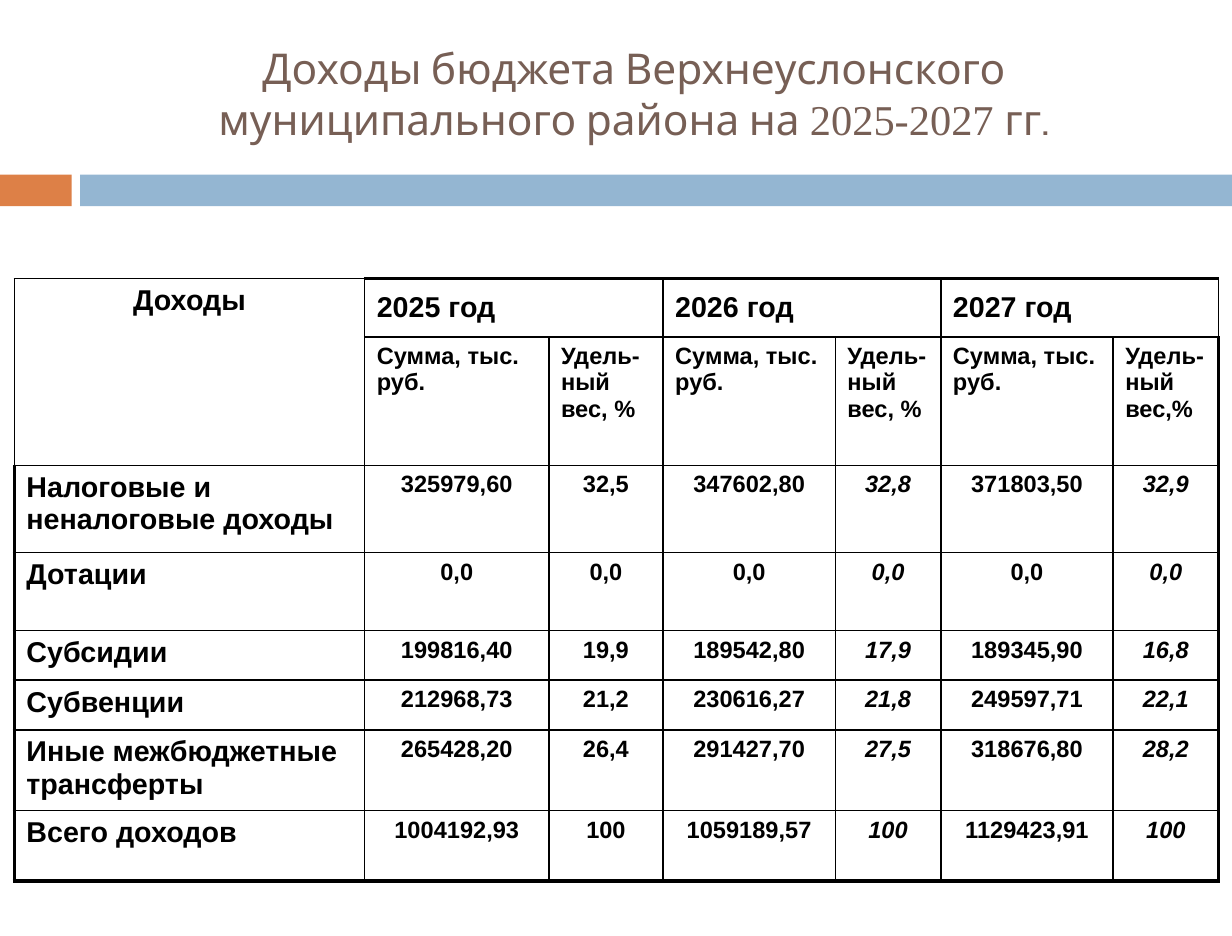
from lxml.etree import SubElement
from pptx import Presentation
from pptx.dml.color import RGBColor
from pptx.enum.shapes import MSO_SHAPE as Shape
from pptx.enum.text import MSO_ANCHOR as Anchor, PP_ALIGN as Align
from pptx.oxml.ns import qn
from pptx.util import Cm, Pt


def paint(fill, color):
    fill.solid()
    fill.fore_color.rgb = RGBColor.from_string(color)


def write(para, text, color, **form):
    """Add a run and set its font from the format values."""
    run = para.add_run()
    run.text = text
    paint(run.font.fill, color)
    for key, val in form.items():
        setattr(run.font, key, val)


deck = Presentation()
deck.slide_width, deck.slide_height = Cm(25.81), Cm(19.61)
slide = deck.slides.add_slide(deck.slide_layouts[6])

# Bands under the title
for left, width, color in [(0, 1.5, "DD8047"), (1.68, 24.13, "94B6D2")]:
    band = slide.shapes.add_shape(Shape.RECTANGLE, Cm(left), Cm(3.66), Cm(width), Cm(0.66))
    band.shadow.inherit = False
    paint(band.fill, color)
    band.line.fill.background()

# Title
frame = slide.shapes.add_textbox(Cm(2.11), Cm(0.66), Cm(22.35), Cm(2.59)).text_frame
frame.word_wrap = True
frame.vertical_anchor = Anchor.MIDDLE
title = frame.paragraphs[0]
title.alignment = Align.CENTER
for text, font in [
    ("Доходы бюджета Верхнеуслонского муниципального района на ", "Cabin"),
    ("2025-2027 ", "Times New Roman"),
    ("гг.", "Cabin"),
]:
    write(title, text, "775F55", name=font, size=Pt(25.2))

# Income table
SUM, SHARE = "Сумма, тыс. руб.", "Удель-ный вес, %"
rows = [
    ["Доходы", "2025 год", "", "2026 год", "", "2027 год", ""],
    ["", SUM, SHARE, SUM, SHARE, SUM, "Удель-ный вес,%"],
    ["Налоговые и неналоговые доходы", "325979,60", "32,5", "347602,80", "32,8", "371803,50", "32,9"],
    ["Дотации", "0,0", "0,0", "0,0", "0,0", "0,0", "0,0"],
    ["Субсидии", "199816,40", "19,9", "189542,80", "17,9", "189345,90", "16,8"],
    ["Субвенции", "212968,73", "21,2", "230616,27", "21,8", "249597,71", "22,1"],
    ["Иные межбюджетные трансферты", "265428,20", "26,4", "291427,70", "27,5", "318676,80", "28,2"],
    ["Всего доходов", "1004192,93", "100", "1059189,57", "100", "1129423,91", "100"],
]
widths = [7.34, 3.86, 2.39, 3.61, 2.21, 3.61, 2.21]
heights = [1.22, 2.69, 1.83, 1.63, 1.04, 1.04, 1.6, 1.47]
end_row, end_col = len(rows) - 1, len(widths) - 1

table = slide.shapes.add_table(
    len(rows), len(widths), Cm(0.3), Cm(5.84), Cm(sum(widths)), Cm(sum(heights))
).table
table.first_row = table.horz_banding = False
for col, width in zip(table.columns, widths):
    col.width = Cm(width)
for row, height in zip(table.rows, heights):
    row.height = Cm(height)

for r, row in enumerate(rows):
    for c, text in enumerate(row):
        cell = table.cell(r, c)
        # The outer frame is thick, except around the corner cell
        thick = {
            "L": c == 0 and r > 1,
            "R": c == end_col,
            "T": r == 0 and c > 0,
            "B": r == end_row,
        }
        props = cell._tc.get_or_add_tcPr()
        for side, bold in thick.items():
            line = SubElement(props, qn("a:ln" + side), w=str(Pt(2.25 if bold else 1)))
            SubElement(SubElement(line, qn("a:solidFill")), qn("a:srgbClr"), val="000000")
        cell.fill.background()
        if not text:
            continue
        para = cell.text_frame.paragraphs[0]
        figure = r > 1 and c > 0
        para.alignment = Align.CENTER if figure or r == c == 0 else Align.LEFT
        cell.vertical_anchor = Anchor.MIDDLE if r == 0 and c > 0 else Anchor.TOP
        size = 17 if r == 0 or c == 0 else 14
        write(para, text, "000000", name="Arial", size=Pt(size), bold=True,
              italic=figure and c in (4, 6))

corner = table.cell(0, 0)
paint(corner.fill, "FFFFFF")
corner.merge(table.cell(1, 0))
for c in (1, 3, 5):
    table.cell(0, c).merge(table.cell(0, c + 1))

deck.save("out.pptx")
